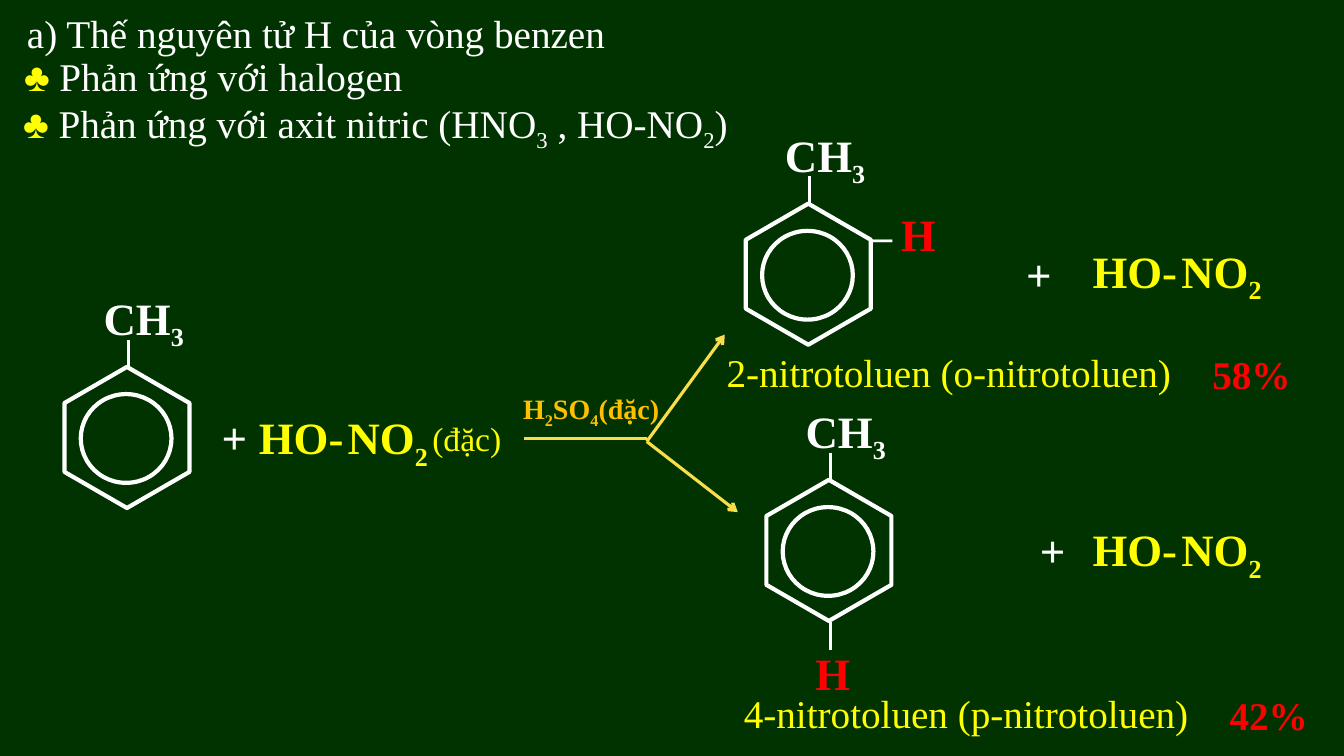
from lxml import etree
from pptx import Presentation
from pptx.dml.color import RGBColor
from pptx.enum.shapes import MSO_CONNECTOR, MSO_SHAPE
from pptx.enum.text import MSO_AUTO_SIZE
from pptx.oxml.ns import qn
from pptx.util import Pt

STRAIGHT = MSO_CONNECTOR.STRAIGHT
HEXAGON = MSO_SHAPE.HEXAGON
OVAL = MSO_SHAPE.OVAL
FIT_SHAPE = MSO_AUTO_SIZE.SHAPE_TO_FIT_TEXT

GREEN, WHITE, YELLOW, RED = "003300", "FFFFFF", "FFFF00", "FF0000"
GOLD, ORANGE = "FADD4D", "FFC000"


def color(value):
    return RGBColor.from_string(value)


class ReactionSlide:
    font_name = "Times New Roman"

    def __init__(self, presentation):
        self.slide = presentation.slides.add_slide(presentation.slide_layouts[6])
        background = self.slide.background.fill
        background.solid()
        background.fore_color.rgb = color(GREEN)

    def text(self, left, top, width, parts, size=28, bold=False, wrap=False):
        """Add (text, colour) parts; the character after each "_" is a subscript."""
        box = self.slide.shapes.add_textbox(
            Pt(left), Pt(top), Pt(width), Pt(1.2 * size + 7.2))
        frame = box.text_frame
        frame.word_wrap = wrap
        frame.auto_size = FIT_SHAPE
        paragraph = frame.paragraphs[0]
        paragraph.font.name = self.font_name
        paragraph.font.size = Pt(size)
        paragraph.font.bold = bold
        for content, fill in parts:
            first, *others = content.split("_")
            self.run(paragraph, first, fill)
            for piece in others:
                self.run(paragraph, piece[0], fill, subscript=True)
                self.run(paragraph, piece[1:], fill)

    def run(self, paragraph, content, fill, subscript=False):
        if not content:
            return
        run = paragraph.add_run()
        run.text = content
        run.font.color.rgb = color(fill)
        if subscript:
            run.font._element.set("baseline", "-25000")

    def line(self, start, end, stroke, width, arrow=False):
        connector = self.slide.shapes.add_connector(
            STRAIGHT, *(Pt(value) for value in (*start, *end)))
        connector.line.color.rgb = color(stroke)
        connector.line.width = Pt(width)
        properties = connector._element.spPr
        if arrow:
            etree.SubElement(properties.find(qn("a:ln")), qn("a:tailEnd"), type="arrow")
        etree.SubElement(properties, qn("a:effectLst"))

    def outline(self, group, kind, left, top, width, height):
        shape = group.shapes.add_shape(kind, Pt(left), Pt(top), Pt(width), Pt(height))
        shape.shadow.inherit = False
        shape.fill.background()
        shape.line.color.rgb = color(WHITE)
        shape.line.width = Pt(3)
        return shape

    def bond(self, x, top):
        self.line((x, top), (x, top + 20.2), WHITE, 2)

    def toluene(self, left, top):
        ring = self.slide.shapes.add_group_shape()
        hexagon = self.outline(ring, HEXAGON, left, top, 100.8, 89.3)
        hexagon.rotation = 270
        hexagon.adjustments[0] = 0.289
        hexagon.adjustments[1] = 1.155
        self.outline(ring, OVAL, left + 17.4, top + 13.7, 64.8, 63.4)
        self.bond(left + 51.3, top - 25.2)
        self.text(left + 26.6, top - 63.7, 73.4, [("CH_3", WHITE)], 32, True)

    def plus(self, left, top):
        self.text(left, top, 47.5, [("+", WHITE)], 32, True, wrap=True)

    def nitric_acid(self, left, top):
        self.text(left, top, 75.6, [("HO-", YELLOW)], 32, True)
        self.text(left + 63.4, top, 73.4, [("NO_2", YELLOW)], 32, True)

    def product(self, left, top, name, share):
        self.text(left, top, 335.5, [(name, YELLOW)])
        self.text(left + 347, top + 1.4, 71.3, [(share, RED)], bold=True)


def main():
    presentation = Presentation()
    presentation.slide_width = Pt(960)
    presentation.slide_height = Pt(540)
    slide = ReactionSlide(presentation)

    club = ("♣ ", YELLOW)
    headings = [
        (12.2, 2.9, [("a) Thế nguyên tử H của vòng benzen", WHITE)]),
        (10.1, 33.8, [club, ("Phản ứng với halogen", WHITE)]),
        (9.4, 67.7, [club, ("Phản ứng với axit nitric (HNO_3 , HO-NO_2)", WHITE)]),
    ]
    for left, top, parts in headings:
        slide.text(left, top, 662.4, parts, wrap=True)

    for left, top in [(40.3, 267.8), (527, 151.2), (541.7, 348.5)]:
        slide.toluene(left, top)
    for left, top in [(151.2, 289.4), (725.8, 172.8), (735.8, 370.1)]:
        slide.plus(left, top)
    for left, top in [(177.8, 289.4), (773.3, 170.6), (773.3, 369.4)]:
        slide.nitric_acid(left, top)

    slide.text(301.7, 295.2, 72.7, [("(đặc)", YELLOW)], 24, wrap=True)
    slide.text(366.5, 275.8, 114.5, [("H_2SO_4(đặc)", ORANGE)], 20, True)
    slide.line((374.4, 313.2), (462.2, 313.2), GOLD, 2.25)
    for tip in [(517.7, 239), (527, 365.8)]:
        slide.line((462, 315.4), tip, GOLD, 2.25, arrow=True)

    slide.text(616.3, 147.6, 36, [("–", WHITE)], bold=True, wrap=True)
    slide.text(636.5, 144, 86.4, [("H", RED)], 32, True, wrap=True)
    slide.bond(593.3, 444.2)
    slide.text(575.3, 457.9, 39.6, [("H", RED)], 32, True)

    slide.product(511.9, 245.5, "2-nitrotoluen (o-nitrotoluen)", "58%")
    slide.product(524.2, 488.9, "4-nitrotoluen (p-nitrotoluen)", "42%")

    presentation.save("out.pptx")


if __name__ == "__main__":
    main()
